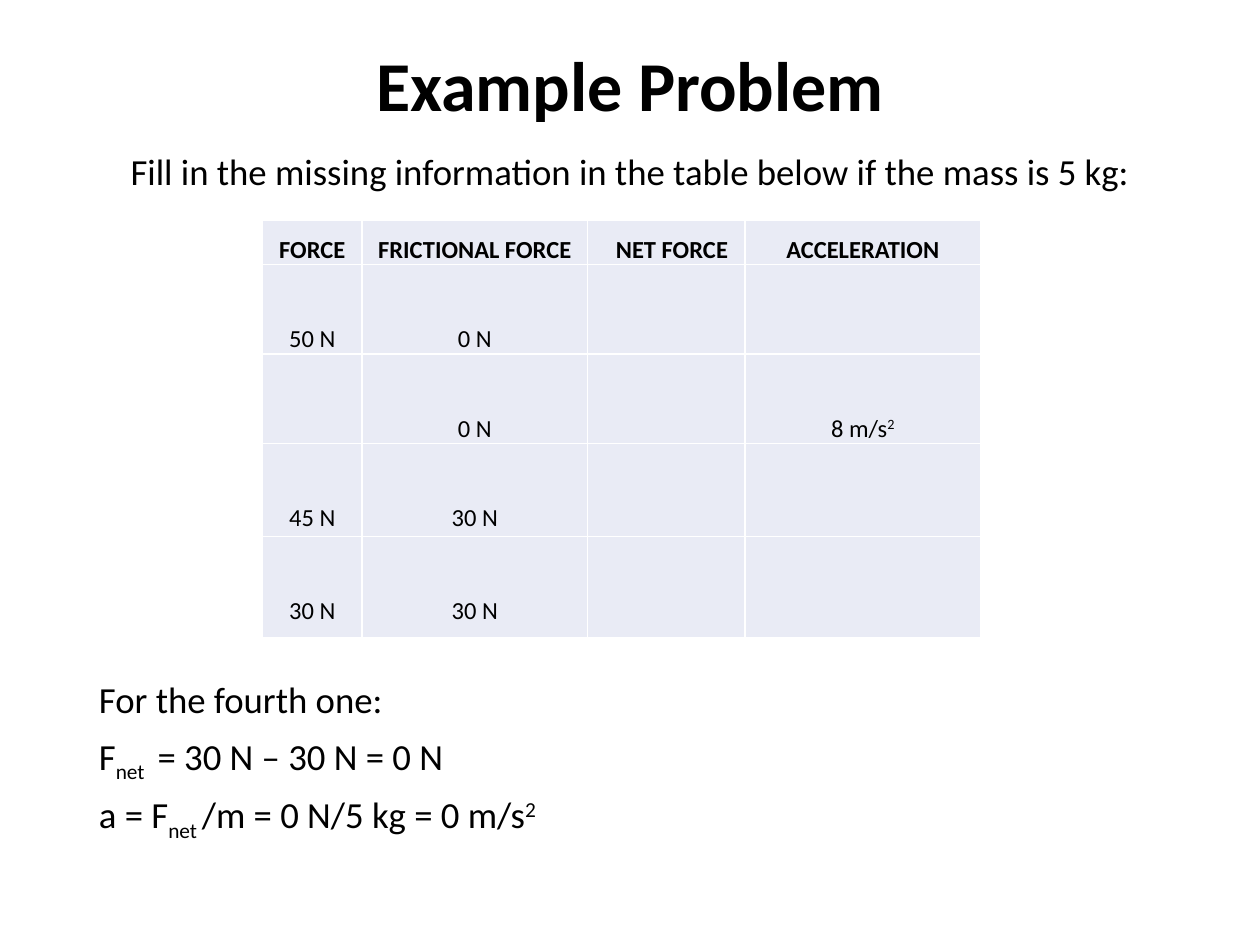
"""Build a physics example slide with a force table and a worked answer."""
from lxml.etree import SubElement
from pptx import Presentation
from pptx.dml.color import RGBColor
from pptx.enum.text import MSO_ANCHOR as Anchor, PP_ALIGN as Align
from pptx.oxml.ns import qn
from pptx.util import Pt

BLACK, WHITE, PALE = "000000", "FFFFFF", "E9EBF5"
SUB, SUPER = -25000, 30000
CELL_INSET = 5
CELL_LINE = 25.6
NET_FORCE_SHIFT = 6.4

COLUMN_WIDTHS = [56.9, 128.9, 90, 134.6]
ROW_HEIGHTS = [25.2, 51.1, 51.1, 53.2, 58]
HEADINGS = ["FORCE", "FRICTIONAL FORCE", "NET FORCE", "ACCELERATION"]
PROBLEMS = [
    ["50 N", "0 N", None, None],
    [None, "0 N", None, [("8 m/s", 0), ("2", SUPER)]],
    ["45 N", "30 N", None, None],
    ["30 N", "30 N", None, None],
]
PROMPT = "Fill in the missing information in the table below if the mass is 5 kg:"
SOLUTION = [
    "For the fourth one:",
    [("F", 0), ("net ", SUB), (" = 30 N – 30 N = 0 N", 0)],
    [("a = F", 0), ("net ", SUB), ("/m = 0 N/5 kg = 0 m/s", 0), ("2", SUPER)],
]


def color(hex_code):
    """Turn a hex string into a colour."""
    return RGBColor.from_string(hex_code)


def write(paragraph, content, size, align, spacing, bold=False):
    """Fill a paragraph with plain text or (text, baseline) pieces."""
    paragraph.alignment = align
    paragraph.line_spacing = spacing
    font = paragraph.font
    font.name, font.size, font.bold = "Calibri", Pt(size), bold
    font.color.rgb = color(BLACK)
    pieces = [(content, 0)] if isinstance(content, str) else content
    for text, baseline in pieces:
        run = paragraph.add_run()
        run.text = text
        if baseline:
            run._r.get_or_add_rPr().set("baseline", str(baseline))


def add_text(slide, top, height, lines, size, align, bold=False, before=0, anchor=Anchor.TOP):
    """Add a text box across the content width, one paragraph per line."""
    box = slide.shapes.add_textbox(Pt(49.5), Pt(top), Pt(621), Pt(height))
    frame = box.text_frame
    frame.word_wrap = True
    frame.vertical_anchor = anchor
    for index, line in enumerate(lines):
        paragraph = frame.add_paragraph() if index else frame.paragraphs[0]
        paragraph.space_before = Pt(before)
        write(paragraph, line, size, align, 0.9, bold)


def style_cell(cell):
    """Give a cell white borders, a pale fill and tight insets."""
    properties = cell._tc.get_or_add_tcPr()
    for side in ("lnL", "lnR", "lnT", "lnB"):
        line = SubElement(properties, qn(f"a:{side}"), w=str(Pt(1)))
        SubElement(SubElement(line, qn("a:solidFill")), qn("a:srgbClr"), val=WHITE)
    cell.fill.solid()
    cell.fill.fore_color.rgb = color(PALE)
    cell.margin_left = cell.margin_right = Pt(CELL_INSET)
    cell.margin_top = cell.margin_bottom = 0


def add_force_table(slide):
    """Add the table of forces, with each value on the second line of its cell."""
    rows = [HEADINGS] + PROBLEMS
    table = slide.shapes.add_table(
        len(rows), len(HEADINGS), Pt(150), Pt(126),
        Pt(sum(COLUMN_WIDTHS)), Pt(sum(ROW_HEIGHTS))).table
    table.first_row = table.horz_banding = False
    for column, width in zip(table.columns, COLUMN_WIDTHS):
        column.width = Pt(width)
    for row, height in zip(table.rows, ROW_HEIGHTS):
        row.height = Pt(height)
    for row_index, values in enumerate(rows):
        for column_index, value in enumerate(values):
            cell = table.cell(row_index, column_index)
            style_cell(cell)
            if value:
                is_heading = row_index == 0
                cell.margin_top = Pt(0 if is_heading else CELL_LINE)
                write(cell.text_frame.paragraphs[0], value, 14, Align.CENTER, 1.5, is_heading)
    table.cell(0, HEADINGS.index("NET FORCE")).margin_left = Pt(CELL_INSET + NET_FORCE_SHIFT)


def main():
    """Build and save the slide."""
    deck = Presentation()
    deck.slide_width, deck.slide_height = Pt(720), Pt(540)
    slide = deck.slides.add_slide(deck.slide_layouts[6])
    add_text(slide, -1.5, 104.5, ["Example Problem"], 40, Align.CENTER, True, anchor=Anchor.MIDDLE)
    add_text(slide, 84.25, 34, [PROMPT], 21, Align.CENTER, before=7.5)
    add_force_table(slide)
    add_text(slide, 386, 108, SOLUTION, 21, Align.LEFT, before=7.5)
    deck.save("out.pptx")


if __name__ == "__main__":
    main()
